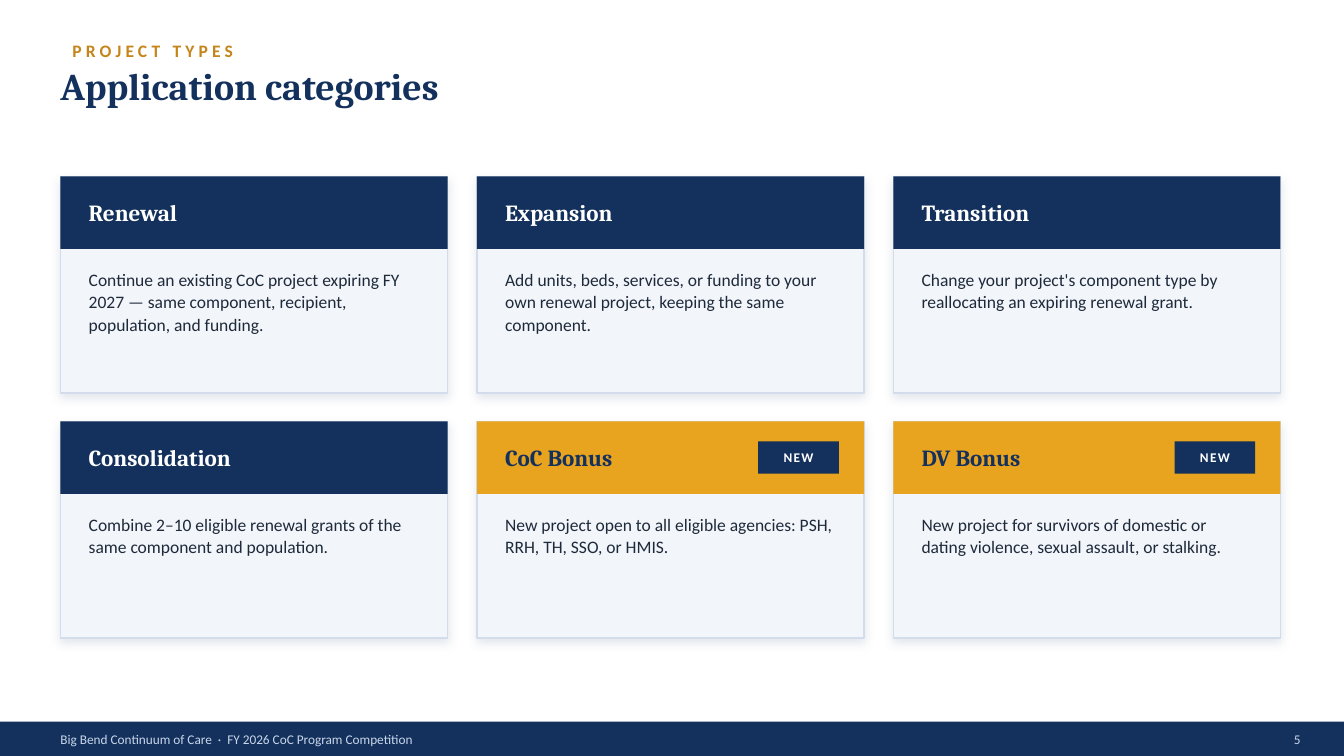
from lxml.etree import SubElement
from pptx import Presentation
from pptx.dml.color import RGBColor
from pptx.enum.shapes import MSO_SHAPE
from pptx.enum.text import MSO_ANCHOR, PP_ALIGN
from pptx.oxml.ns import qn
from pptx.util import Inches, Pt

NAVY = RGBColor(0x13, 0x31, 0x5C)
GOLD = RGBColor(0xE8, 0xA3, 0x1F)
AMBER = RGBColor(0xC6, 0x85, 0x1A)
PALE = RGBColor(0xF2, 0xF5, 0xFA)
EDGE = RGBColor(0xD3, 0xDC, 0xEA)
INK = RGBColor(0x1E, 0x2A, 0x3A)
MIST = RGBColor(0xC9, 0xD6, 0xEA)
SHADE = RGBColor(0x9A, 0xA7, 0xBC)
WHITE = RGBColor(0xFF, 0xFF, 0xFF)

KICKER = "PROJECT TYPES"
TITLE = "Application categories"
# name, description, is new
CARDS = [
    ("Renewal", "Continue an existing CoC project expiring FY 2027 — same "
     "component, recipient, population, and funding.", False),
    ("Expansion", "Add units, beds, services, or funding to your own renewal "
     "project, keeping the same component.", False),
    ("Transition", "Change your project's component type by reallocating an "
     "expiring renewal grant.", False),
    ("Consolidation", "Combine 2–10 eligible renewal grants of the same "
     "component and population.", False),
    ("CoC Bonus", "New project open to all eligible agencies: PSH, RRH, TH, "
     "SSO, or HMIS.", True),
    ("DV Bonus", "New project for survivors of domestic or dating violence, "
     "sexual assault, or stalking.", True),
]
BADGE = "NEW"
FOOTER = "Big Bend Continuum of Care  ·  FY 2026 CoC Program Competition"
PAGE = "5"

WIDE, HIGH = 13.33, 7.5
LEFT, TOP = 0.6, 1.75
COLS, GAP_X, GAP_Y = 3, 0.29, 0.28
CARD_W, CARD_H, HEAD_H = 3.84, 2.15, 0.72
PAD = 0.28
TAG_W, TAG_H, TAG_PAD = 0.8, 0.32, 0.12
FOOT_H = 0.34

deck = Presentation()
deck.slide_width, deck.slide_height = Inches(WIDE), Inches(HIGH)
slide = deck.slides.add_slide(deck.slide_layouts[6])


def rect(x, y, w, h, fill, line=None):
    box = slide.shapes.add_shape(
        MSO_SHAPE.RECTANGLE, Inches(x), Inches(y), Inches(w), Inches(h))
    box.shadow.inherit = False
    box.fill.solid()
    box.fill.fore_color.rgb = fill
    if line is None:
        box.line.fill.background()
    else:
        box.line.color.rgb = line
        box.line.width = Pt(1)
    return box


def shade(box):
    """Add a soft shadow below the box."""
    effects = box._element.spPr.find(qn("a:effectLst"))
    outer = SubElement(effects, qn("a:outerShdw"), blurRad=str(Pt(7)),
                       dist=str(Pt(3)), dir="5400000", algn="t",
                       rotWithShape="0")
    color = SubElement(outer, qn("a:srgbClr"), val=str(SHADE))
    SubElement(color, qn("a:alpha"), val="28000")


def write(text, at=None, box=None, size=12.5, face="Calibri", color=INK,
          bold=False, track=0, align=PP_ALIGN.LEFT, anchor=MSO_ANCHOR.MIDDLE,
          inset=0, lead=None):
    """Put text in the given box, or in a new text box at the given place."""
    if box is None:
        box = slide.shapes.add_textbox(*(Inches(n) for n in at))
    frame = box.text_frame
    frame.word_wrap = True
    frame.vertical_anchor = anchor
    frame.margin_left = frame.margin_right = Inches(inset)
    frame.margin_top = frame.margin_bottom = Inches(inset / 2)
    para = frame.paragraphs[0]
    para.alignment = align
    if lead:
        para.line_spacing = lead
    run = para.add_run()
    run.text = text
    font = run.font
    font.size, font.name, font.bold = Pt(size), face, bold
    font.color.rgb = color
    if track:
        run._r.get_or_add_rPr().set("spc", str(track * 100))


def card(x, y, name, about, new):
    shade(rect(x, y, CARD_W, CARD_H, PALE, EDGE))
    rect(x, y, CARD_W, HEAD_H, GOLD if new else NAVY)
    write(name, (x + PAD, y, 2.94, HEAD_H), size=16.5, face="Cambria",
          color=NAVY if new else WHITE, bold=True)
    if new:
        tag = rect(x + CARD_W - TAG_PAD * 2 - TAG_W - 0.01,
                   y + (HEAD_H - TAG_H) / 2, TAG_W, TAG_H, NAVY)
        write(BADGE, box=tag, size=9.5, color=WHITE, bold=True, track=1,
              align=PP_ALIGN.CENTER)
    write(about, (x + PAD, y + HEAD_H + 0.18, CARD_W - 2 * PAD, 1.1),
          anchor=MSO_ANCHOR.TOP, lead=1.08)


write(KICKER, (0.62, 0.34, 11, 0.32), color=AMBER, bold=True, track=3,
      inset=0.1)
write(TITLE, (LEFT, 0.62, 12.1, 0.85), size=27, face="Cambria", color=NAVY,
      bold=True, anchor=MSO_ANCHOR.TOP)

for i, item in enumerate(CARDS):
    row, col = divmod(i, COLS)
    card(LEFT + col * (CARD_W + GAP_X), TOP + row * (CARD_H + GAP_Y), *item)

foot = HIGH - FOOT_H
rect(0, foot, WIDE, FOOT_H, NAVY)
write(FOOTER, (LEFT, foot, 9, FOOT_H), size=9.5, color=MIST)
write(PAGE, (12.4, foot, 0.5, FOOT_H), size=9.5, color=MIST,
      align=PP_ALIGN.RIGHT)

deck.save("out.pptx")
